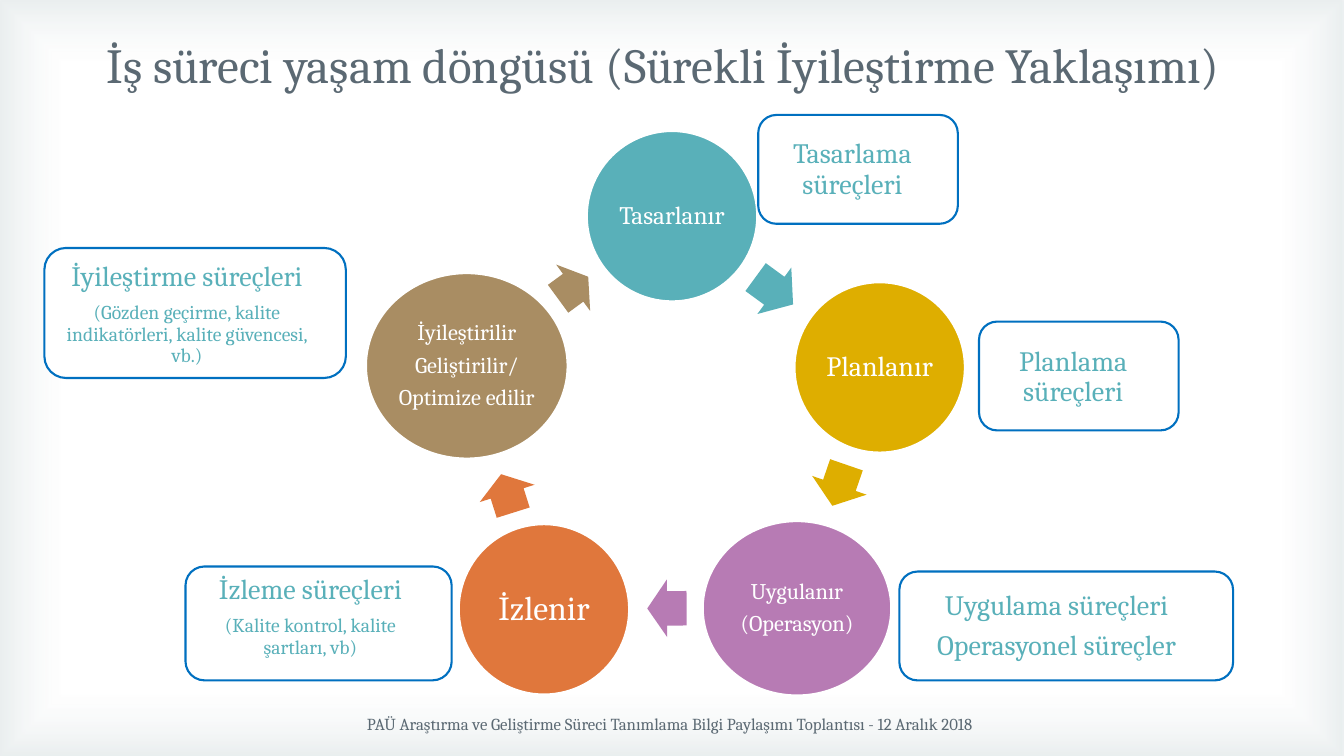
from dataclasses import dataclass
from math import sqrt

from lxml.etree import SubElement
from pptx import Presentation
from pptx.dml.color import RGBColor
from pptx.enum.shapes import MSO_SHAPE as Preset
from pptx.enum.text import MSO_ANCHOR as Anchor, PP_ALIGN as Align
from pptx.oxml.ns import qn
from pptx.shapes.autoshape import Shape
from pptx.slide import Slide
from pptx.util import Inches, Pt

FONT = "Cambria"
COLORS = {
    "white": "FFFFFF", "edge": "A4B7BB", "grey": "5B6973", "border": "0070C0",
    "teal": "59B0B9", "gold": "DEAE00", "purple": "B77BB4",
    "orange": "E0773C", "brown": "A98D63",
}
Box = tuple[float, float, float, float]


@dataclass
class Line:
    text: str
    size: float


@dataclass
class Stage:
    color: str
    circle: Box
    lines: list[Line]
    inset: float
    arrow: Box
    rotation: float


@dataclass
class Callout:
    frame: Box
    text_area: Box
    lines: list[Line]


STAGES = [
    Stage("teal", (5.82, 1.3, 1.69, 1.69), [Line("Tasarlanır", 18)], 0.03,
          (7.45, 2.6, 0.46, 0.57), 36.1),
    Stage("gold", (7.88, 2.8, 1.69, 1.69), [Line("Planlanır", 20)], 0.03,
          (8.11, 4.53, 0.43, 0.57), 109),
    Stage("purple", (6.97, 5.17, 1.87, 1.73),
          [Line("Uygulanır", 16), Line("(Operasyon)", 16)], 0.02,
          (6.42, 5.75, 0.39, 0.57), 179.6),
    Stage("orange", (4.55, 5.2, 1.69, 1.69), [Line("İzlenir", 24)], 0.03,
          (4.83, 4.61, 0.4, 0.57), 252.5),
    Stage("brown", (3.63, 2.71, 2, 1.84),
          [Line("İyileştirilir", 16), Line("Geliştirilir/", 16),
           Line("Optimize edilir", 16)], 0.02,
          (5.5, 2.57, 0.37, 0.57), 323.8),
]

CALLOUTS = [
    Callout((7.52, 1.14, 1.98, 1.08), (7.54, 1.2, 1.83, 0.97),
            [Line("Tasarlama süreçleri", 20)]),
    Callout((9.71, 3.19, 1.98, 1.08), (9.73, 3.26, 1.83, 0.97),
            [Line("Planlama süreçleri", 20)]),
    Callout((8.92, 5.67, 3.31, 1.08), (8.95, 5.73, 3.06, 0.97),
            [Line("Uygulama süreçleri", 20), Line("Operasyonel süreçler", 20)]),
    Callout((1.84, 5.62, 2.64, 1.13), (1.86, 5.66, 2.44, 0.92),
            [Line("İzleme süreçleri", 20),
             Line("(Kalite kontrol, kalite şartları, vb)", 14)]),
    Callout((0.44, 2.46, 2.99, 1.29), (0.47, 2.54, 2.77, 1.16),
            [Line("İyileştirme süreçleri", 20),
             Line("(Gözden geçirme, kalite indikatörleri, kalite güvencesi, vb.)", 14)]),
]


def rgb(name: str) -> RGBColor:
    return RGBColor.from_string(COLORS[name])


def add_preset(page: Slide, preset: Preset, box: Box, fill: str,
               line: str | None = None) -> Shape:
    shape = page.shapes.add_shape(preset, *map(Inches, box))
    shape.shadow.inherit = False
    shape.fill.solid()
    shape.fill.fore_color.rgb = rgb(fill)
    if line:
        shape.line.color.rgb = rgb(line)
        shape.line.width = Pt(1.5)
    else:
        shape.line.fill.background()
    return shape


def add_text(page: Slide, box: Box, lines: list[Line], color: str,
             anchor: Anchor = Anchor.MIDDLE, inset: float | None = None) -> None:
    """Add centred text; an inset also selects the tight diagram spacing."""
    frame = page.shapes.add_textbox(*map(Inches, box)).text_frame
    frame.word_wrap = True
    frame.vertical_anchor = anchor
    if inset is not None:
        frame.margin_left = frame.margin_right = Inches(inset)
        frame.margin_top = frame.margin_bottom = Inches(inset)
    for index, line in enumerate(lines):
        para = frame.add_paragraph() if index else frame.paragraphs[0]
        para.alignment = Align.CENTER
        if inset is not None:
            para.line_spacing = 0.9
            para.space_after = Pt(round(0.37 * line.size, 1))
        span = para.add_run()
        span.text = line.text
        span.font.name = FONT
        span.font.size = Pt(line.size)
        span.font.color.rgb = rgb(color)


def add_vignette(page: Slide) -> None:
    """Cover the page with a translucent gradient that darkens at its edges."""
    cover = add_preset(page, Preset.RECTANGLE, (0, 0, 13.33, 7.5), "white")
    solid = cover.fill._xPr.find(qn("a:solidFill"))
    gradient = solid.makeelement(qn("a:gradFill"), {"rotWithShape": "1"})
    stops = SubElement(gradient, qn("a:gsLst"))
    for position, color, alpha in ((83, "white", 11), (100, "edge", 23)):
        stop = SubElement(stops, qn("a:gs"), pos=str(position * 1000))
        tint = SubElement(stop, qn("a:srgbClr"), val=COLORS[color])
        SubElement(tint, qn("a:alpha"), val=str(alpha * 1000))
    shade = SubElement(gradient, qn("a:path"), {"path": "rect"})
    SubElement(shade, qn("a:fillToRect"), dict.fromkeys("ltrb", "50000"))
    solid.getparent().replace(solid, gradient)


def inscribed(box: Box) -> Box:
    """Return the largest rectangle inside the ellipse that fills the box."""
    left, top, width, height = box
    inner_width, inner_height = width / sqrt(2), height / sqrt(2)
    return (left + (width - inner_width) / 2, top + (height - inner_height) / 2,
            inner_width, inner_height)


def add_stage(page: Slide, stage: Stage) -> None:
    add_preset(page, Preset.OVAL, stage.circle, stage.color, "white")
    add_text(page, inscribed(stage.circle), stage.lines, "white", inset=stage.inset)
    arrow = add_preset(page, Preset.RIGHT_ARROW, stage.arrow, stage.color)
    arrow.adjustments[0] = 0.6
    arrow.adjustments[1] = 0.5
    arrow.rotation = stage.rotation


def add_callout(page: Slide, callout: Callout) -> None:
    add_preset(page, Preset.ROUNDED_RECTANGLE, callout.frame, "white", "border")
    add_text(page, callout.text_area, callout.lines, "teal", inset=0.08)


def main() -> None:
    deck = Presentation()
    deck.slide_width, deck.slide_height = Inches(13.33), Inches(7.5)
    page = deck.slides.add_slide(deck.slide_layouts[6])
    add_vignette(page)
    for stage in STAGES:
        add_stage(page, stage)
    add_text(page, (1.54, 6.98, 10.21, 0.4),
             [Line("PAÜ Araştırma ve Geliştirme Süreci Tanımlama Bilgi Paylaşımı "
                   "Toplantısı - 12 Aralık 2018", 12)], "grey")
    add_text(page, (0.03, 0.29, 13.1, 1.15),
             [Line("İş süreci yaşam döngüsü (Sürekli İyileştirme Yaklaşımı)", 35)],
             "grey", Anchor.TOP)
    for callout in CALLOUTS:
        add_callout(page, callout)
    deck.save("out.pptx")


if __name__ == "__main__":
    main()
